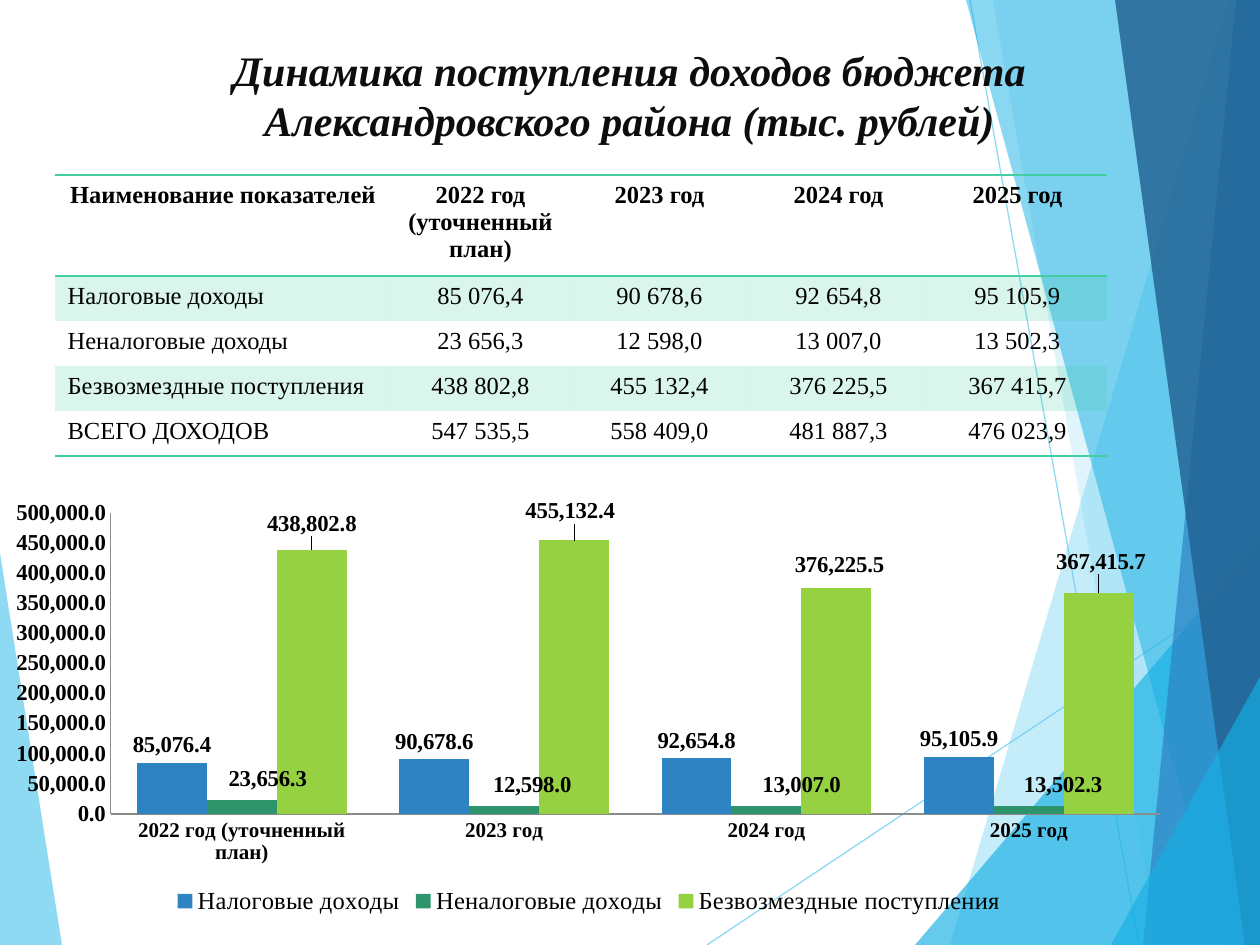
from lxml import etree
from pptx import Presentation
from pptx.chart.data import CategoryChartData
from pptx.dml.color import RGBColor
from pptx.enum.chart import XL_CHART_TYPE, XL_LABEL_POSITION, XL_LEGEND_POSITION, XL_TICK_MARK
from pptx.enum.shapes import MSO_CONNECTOR
from pptx.enum.text import MSO_ANCHOR, PP_ALIGN
from pptx.oxml.ns import qn
from pptx.util import Inches, Pt

PX = 7257  # EMU in one px, 126 px to the inch
FONT = "Times New Roman"
NUMBER_FORMAT = "#,##0.0"
CENTER, LEFT = PP_ALIGN.CENTER, PP_ALIGN.LEFT
MIDDLE = MSO_ANCHOR.MIDDLE
STRAIGHT = MSO_CONNECTOR.STRAIGHT
COLUMNS = XL_CHART_TYPE.COLUMN_CLUSTERED
BOTTOM = XL_LEGEND_POSITION.BOTTOM
OUTSIDE_END = XL_LABEL_POSITION.OUTSIDE_END
NO_TICK = XL_TICK_MARK.NONE
COLORS = {
    "sky": "5FCBEF", "cyan": "17B0E4", "blue": "2E83C3", "navy": "226292",
    "mint": "42D0A2", "green": "2E946B", "lime": "96D141",
    "title": "0D0D0D", "text": "000000", "axis": "8C8C8C",
}
RGB = {name: RGBColor.from_string(value) for name, value in COLORS.items()}


def set_opacity(element, percent):
    """Make every plain colour inside the element see-through."""
    for color in element.iter(qn("a:srgbClr")):
        etree.SubElement(color, qn("a:alpha"), val=str(percent * 1000))


def add_layout(parent, index, **values):
    """Insert a manual chart layout, in fractions of the chart size."""
    layout = etree.Element(qn("c:layout"))
    manual = etree.SubElement(layout, qn("c:manualLayout"))
    for name, value in values.items():
        etree.SubElement(manual, qn("c:" + name), val=str(value))
    parent.insert(index, layout)


deck = Presentation()
deck.slide_width, deck.slide_height = Inches(10), Inches(7.5)
page = deck.slides.add_slide(deck.slide_layouts[6])

# Background: thin lines, then translucent facets
for start_x, start_y, end_x, end_y in [(707, 945, 1260, 576), (970, 0, 1139, 945)]:
    line = page.shapes.add_connector(
        STRAIGHT, start_x * PX, start_y * PX, end_x * PX, end_y * PX)
    line.line.color.rgb = RGB["sky"]
    line.line.width = Pt(0.75)
    set_opacity(line._element, 70)
    etree.SubElement(line._element.spPr, qn("a:effectLst"))

facets = [
    ("sky", 70, [(0, 553), (62, 945), (0, 945)]),
    ("sky", 36, [(1229, 0), (950, 945), (1260, 945), (1260, 0)]),
    ("sky", 20, [(993, 0), (1158, 945), (1260, 945), (1260, 0)]),
    ("cyan", 66, [(915, 945), (1260, 541), (1260, 945)]),
    ("cyan", 50, [(966, 0), (1222, 945), (1260, 945), (1260, 0)]),
    ("blue", 70, [(1236, 0), (1143, 945), (1260, 945), (1260, 0)]),
    ("navy", 82, [(1115, 0), (1245, 945), (1260, 945), (1260, 0)]),
    ("cyan", 66, [(1111, 945), (1260, 677), (1260, 945)]),
]
for color, opacity, points in facets:
    outline = page.shapes.build_freeform(*points[0], scale=PX)
    outline.add_line_segments(points[1:], close=True)
    facet = outline.convert_to_shape()
    facet.shadow.inherit = False
    facet.fill.solid()
    facet.fill.fore_color.rgb = RGB[color]
    facet.line.fill.background()
    set_opacity(facet._element.spPr, opacity)

# Title
box = page.shapes.add_textbox(74 * PX, 37 * PX, 1111 * PX, 115 * PX)
box.text_frame.word_wrap = True
box.text_frame.vertical_anchor = MIDDLE
para = box.text_frame.paragraphs[0]
para.alignment = CENTER
span = para.add_run()
span.text = "Динамика поступления доходов бюджета Александровского района (тыс. рублей)"
span.font.name, span.font.size = FONT, Pt(24)
span.font.bold = span.font.italic = True
span.font.color.rgb = RGB["title"]

# Table
rows = [
    ["Наименование показателей", "2022 год (уточненный план)", "2023 год", "2024 год", "2025 год"],
    ["Налоговые доходы", "85 076,4", "90 678,6", "92 654,8", "95 105,9"],
    ["Неналоговые доходы", "23 656,3", "12 598,0", "13 007,0", "13 502,3"],
    ["Безвозмездные поступления", "438 802,8", "455 132,4", "376 225,5", "367 415,7"],
    ["ВСЕГО ДОХОДОВ", "547 535,5", "558 409,0", "481 887,3", "476 023,9"],
]
last_row = len(rows) - 1
table = page.shapes.add_table(
    len(rows), len(rows[0]), 55 * PX, 175 * PX, 1052 * PX, 280 * PX).table
for index, column in enumerate(table.columns):
    column.width = (179 if index else 336) * PX
for row_index, texts in enumerate(rows):
    table.rows[row_index].height = (45 if row_index else 100) * PX
    ruled = {"a:lnT": row_index == 0, "a:lnB": row_index in (0, last_row)}
    if row_index == 1:
        ruled["a:lnT"] = True
    for column_index, text in enumerate(texts):
        cell = table.cell(row_index, column_index)
        para = cell.text_frame.paragraphs[0]
        para.alignment = CENTER if column_index or row_index == 0 else LEFT
        span = para.add_run()
        span.text = text
        span.font.name, span.font.size = FONT, Pt(14)
        span.font.bold = row_index == 0
        span.font.color.rgb = RGB["text"]
        if row_index % 2:
            cell.fill.solid()
            cell.fill.fore_color.rgb = RGB["mint"]
        else:
            cell.fill.background()
        properties = cell._tc.get_or_add_tcPr()
        set_opacity(properties, 20)
        for index, side in enumerate(["a:lnL", "a:lnR", "a:lnT", "a:lnB"]):
            border = etree.Element(qn(side), w=str(Pt(1)))
            if ruled.get(side):
                paint = etree.SubElement(border, qn("a:solidFill"))
                etree.SubElement(paint, qn("a:srgbClr"), val=COLORS["mint"])
            else:
                etree.SubElement(border, qn("a:noFill"))
            properties.insert(index, border)

# Chart; the label shifts are in px from the default place
CHART_WIDTH, CHART_HEIGHT = 1190, 427
income = [
    ("Налоговые доходы", "blue", [85076.4, 90678.6, 92654.8, 95105.9], []),
    ("Неналоговые доходы", "green", [23656.3, 12598, 13007, 13502.3],
     [(26, -3), (28, -4), (35, -4), (34, -3)]),
    ("Безвозмездные поступления", "lime", [438802.8, 455132.4, 376225.5, 367415.7],
     [(0, -8), (-4, -11), (3, -5), (2, -13)]),
]
data = CategoryChartData(number_format=NUMBER_FORMAT)
data.categories = rows[0][1:]
for name, color, values, shifts in income:
    data.add_series(name, values)
chart = page.shapes.add_chart(
    COLUMNS, -6 * PX, 493 * PX, CHART_WIDTH * PX, CHART_HEIGHT * PX, data).chart
chart.has_title = False
chart.has_legend = True
chart.legend.position = BOTTOM
chart.legend.include_in_layout = False
plot = chart.plots[0]
plot.vary_by_categories = False
plot.gap_width, plot.overlap = 75, 0

axes = [chart.category_axis, chart.value_axis]
for axis in axes:
    axis.has_major_gridlines = False
    axis.major_tick_mark = axis.minor_tick_mark = NO_TICK
    axis.format.line.color.rgb = RGB["axis"]
    axis.format.line.width = Pt(1)
chart.value_axis.minimum_scale, chart.value_axis.maximum_scale = 0, 500000
chart.value_axis.major_unit = 50000
chart.value_axis.tick_labels.number_format = NUMBER_FORMAT
chart.value_axis.tick_labels.number_format_is_linked = False

fonts = [
    (chart.font, 14, False), (chart.legend.font, 14, False),
    (axes[0].tick_labels.font, 12, True), (axes[1].tick_labels.font, 13, True),
]
for series, (name, color, values, shifts) in zip(plot.series, income):
    series.format.fill.solid()
    series.format.fill.fore_color.rgb = RGB[color]
    labels = series.data_labels
    labels.show_value = True
    labels.position = OUTSIDE_END
    labels.number_format = NUMBER_FORMAT
    labels.number_format_is_linked = False
    fonts.append((labels.font, 13, True))
    for index in range(len(shifts)):
        label = series.points[index].data_label
        label.position = OUTSIDE_END
        fonts.append((label.font, 13, True))
    for label, (right, down) in zip(series._element.iter(qn("c:dLbl")), shifts):
        add_layout(label, 1, x=round(right / CHART_WIDTH, 4), y=round(down / CHART_HEIGHT, 4))
for font, size, bold in fonts:
    font.name, font.size, font.bold = FONT, Pt(size), bold
    font.color.rgb = RGB["text"]

plot_area = chart._chartSpace.find(".//" + qn("c:plotArea"))
for layout in plot_area.findall(qn("c:layout")):
    plot_area.remove(layout)
add_layout(plot_area, 0, layoutTarget="inner", xMode="edge", yMode="edge",
           x=0.098, y=0.047, w=0.882, h=0.705)

deck.save("out.pptx")
